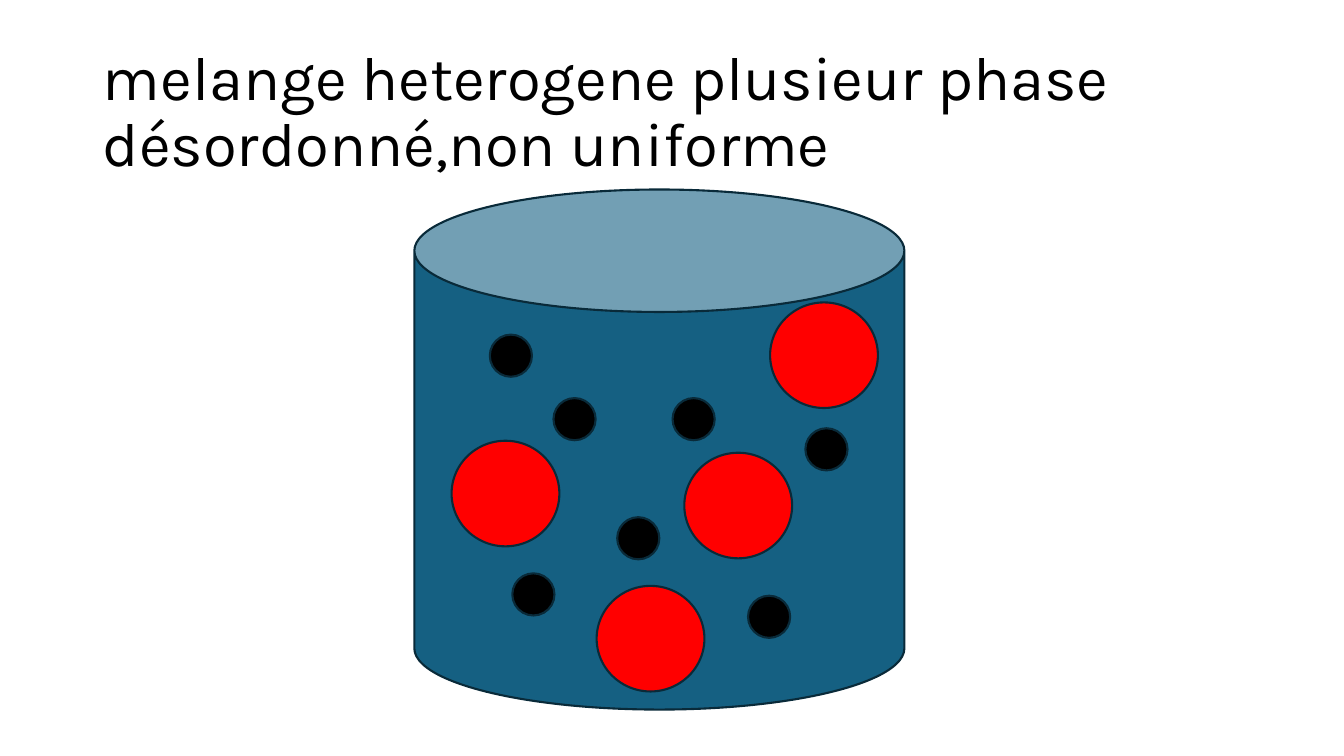
from dataclasses import dataclass

from pptx import Presentation
from pptx.dml.color import RGBColor
from pptx.enum.shapes import MSO_SHAPE
from pptx.enum.text import MSO_ANCHOR, PP_ALIGN
from pptx.util import Inches, Pt

CAN, BALL = MSO_SHAPE.CAN, MSO_SHAPE.OVAL
MIDDLE, LEFT = MSO_ANCHOR.MIDDLE, PP_ALIGN.LEFT


@dataclass(frozen=True)
class Theme:
    font: str = "Karla"
    size: int = 44
    text: str = "000000"
    water: str = "156082"
    edge: str = "092A39"
    grain: str = "000000"
    drop: str = "FF0000"
    line: float = 1.5


THEME = Theme()
LINES = ("melange heterogene plusieur phase", "désordonné,non uniforme")

# Boxes are left, top, width, height in percent of the slide
HEAD = (6.9, 5.33, 86.25, 19.33)
JAR = (30.83, 25.07, 36.46, 68.8)

# Particles: colour, size and left-top spots in percent of the jar
MIX = (
    (THEME.grain, (8.6, 8.1), (
        (15.4, 27.9), (20, 73.8), (52.7, 40.1), (68.1, 78.1),
        (28.4, 40.1), (41.4, 63), (79.8, 45.9))),
    (THEME.drop, (22, 20.3), (
        (7.6, 48.3), (37.2, 76.2), (55.1, 50.6), (72.6, 21.7))),
)


def inner(box, part):
    """Turn percents of a box into a box on the slide."""
    x, y, w, h = box
    px, py, pw, ph = (p / 100 for p in part)
    return tuple(round(v) for v in (x + w * px, y + h * py, w * pw, h * ph))


def style(item, **values):
    for name, value in values.items():
        setattr(item, name, value)


def draw(slide, kind, box, fill):
    shape = slide.shapes.add_shape(kind, *box)
    shape.shadow.inherit = False
    shape.fill.solid()
    shape.fill.fore_color.rgb = RGBColor.from_string(fill)
    shape.line.color.rgb = RGBColor.from_string(THEME.edge)
    shape.line.width = Pt(THEME.line)


def add_head(slide, box):
    title = slide.shapes.title
    x, y, w, h = box
    style(title, left=x, top=y, width=w, height=h)
    style(title.text_frame, vertical_anchor=MIDDLE, word_wrap=True)
    para = title.text_frame.paragraphs[0]
    style(para, alignment=LEFT, line_spacing=0.9)
    for i, words in enumerate(LINES):
        if i:
            para.add_line_break()
        run = para.add_run()
        run.text = words
        style(run.font, name=THEME.font, size=Pt(THEME.size))
        run.font.color.rgb = RGBColor.from_string(THEME.text)


def add_jar(slide, box):
    draw(slide, CAN, box, THEME.water)
    for fill, size, spots in MIX:
        for spot in spots:
            draw(slide, BALL, inner(box, spot + size), fill)


def main():
    deck = Presentation()
    style(deck, slide_width=Inches(13.33), slide_height=Inches(7.5))
    page = (0, 0, deck.slide_width, deck.slide_height)
    slide = deck.slides.add_slide(deck.slide_layouts[5])
    add_head(slide, inner(page, HEAD))
    add_jar(slide, inner(page, JAR))
    deck.save("out.pptx")


if __name__ == "__main__":
    main()
